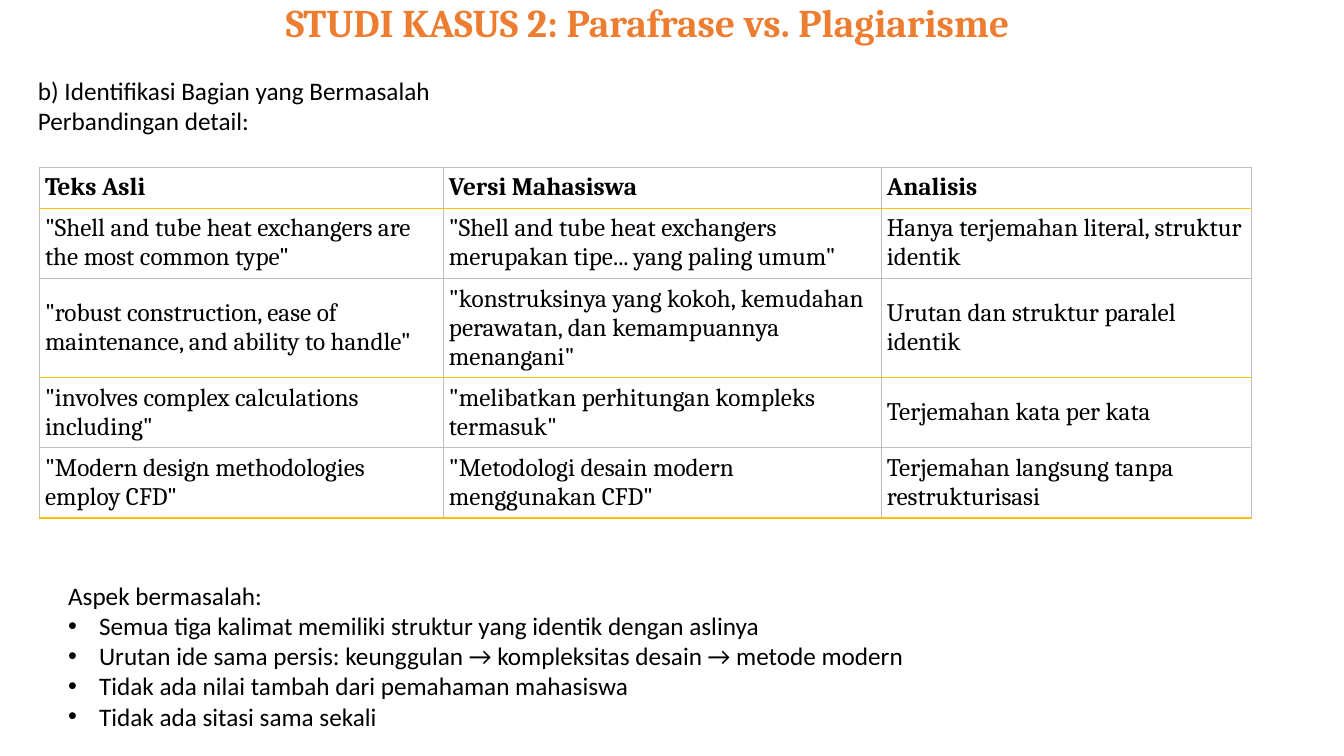
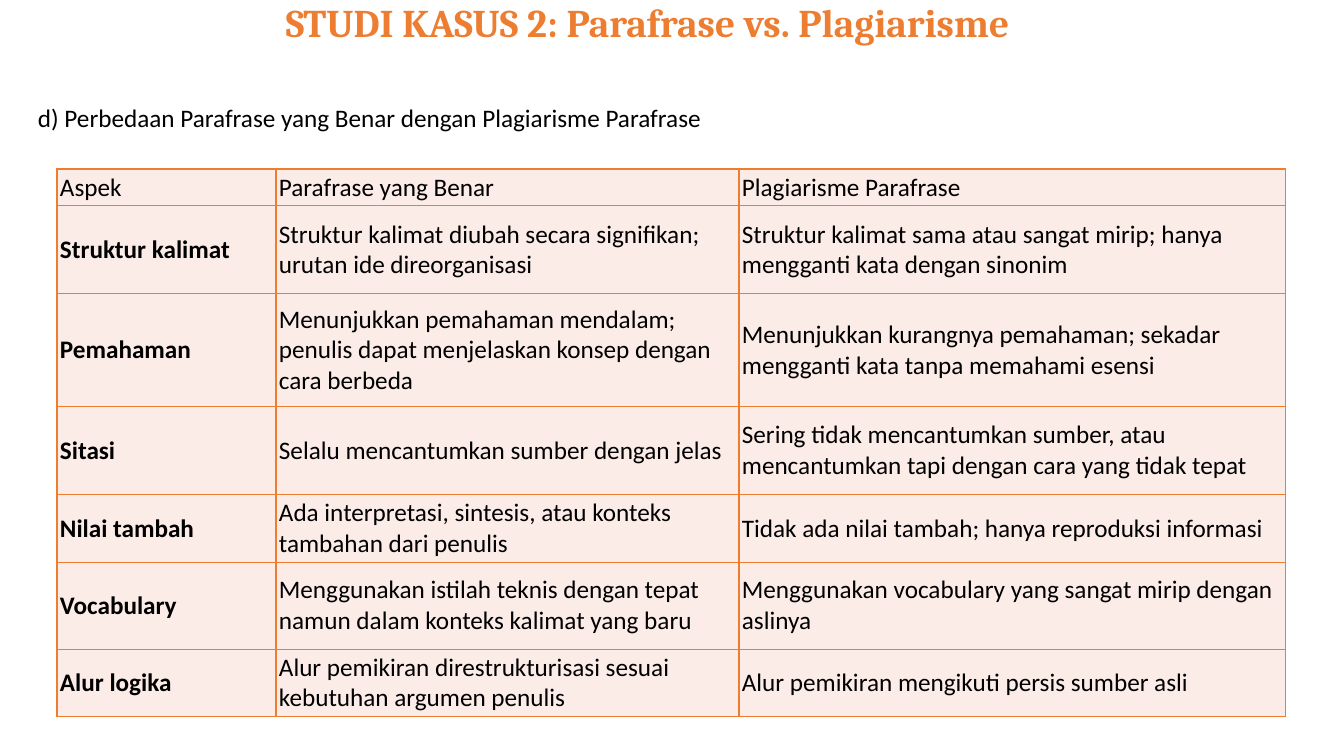
from lxml.etree import SubElement
from pptx import Presentation
from pptx.dml.color import RGBColor
from pptx.enum.text import MSO_ANCHOR, MSO_AUTO_SIZE, PP_ALIGN
from pptx.oxml.ns import qn
from pptx.util import Emu, Pt

EMU_PER_PIXEL = 914400 / 100.8
ORANGE, GOLD, GREY = "ED7D31", "FFC000", "BFBFBF"
BLACK, BLUSH = "000000", "FCECE8"
HEADING_FONT, BODY_FONT = "Cambria", "Calibri"
TITLE_AND_CONTENT, TITLE_ONLY = 1, 5


def px(length):
    return Emu(round(length * EMU_PER_PIXEL))


def color(value):
    return RGBColor.from_string(value)


class Deck:
    """Holds the shared style and the slide being built."""

    def __init__(self):
        self.presentation = Presentation()
        self.presentation.slide_width = px(1344)
        self.presentation.slide_height = px(756)
        self.slide = None

    def add_slide(self, layout, title):
        layouts = self.presentation.slide_layouts
        self.slide = self.presentation.slides.add_slide(layouts[layout])
        shape = self.slide.shapes.title
        self.place(shape, 68, 1, 1159, 48)
        frame = shape.text_frame
        frame.text = title
        frame.auto_size = MSO_AUTO_SIZE.NONE
        frame.vertical_anchor = MSO_ANCHOR.MIDDLE
        paragraph = frame.paragraphs[0]
        paragraph.alignment = PP_ALIGN.CENTER
        paragraph.line_spacing = 0.9
        self.style(paragraph, HEADING_FONT, 28, ORANGE, True)

    def place(self, shape, left, top, width, height):
        shape.left, shape.top = px(left), px(top)
        shape.width, shape.height = px(width), px(height)

    def style(self, paragraph, name=BODY_FONT, size=18, text_color=BLACK, bold=False):
        font = paragraph.font
        font.name, font.size, font.bold = name, Pt(size), bold
        font.color.rgb = color(text_color)

    def text(self, left, top, width, height, lines):
        box = self.slide.shapes.add_textbox(px(left), px(top), px(width), px(height))
        frame = box.text_frame
        frame.word_wrap = True
        frame.text = "\n".join(lines)
        for paragraph in frame.paragraphs:
            self.style(paragraph)

    def bullet_list(self, left, top, width, height, heading, items):
        body = self.slide.placeholders[1]
        self.place(body, left, top, width, height)
        frame = body.text_frame
        frame.auto_size = MSO_AUTO_SIZE.NONE
        frame.text = "\n".join([heading, *items])
        for index, paragraph in enumerate(frame.paragraphs):
            paragraph.space_before = Pt(0)
            indent = px(31) if index else 0
            properties = paragraph._p.get_or_add_pPr()
            properties.set("marL", str(indent))
            properties.set("indent", str(-indent))
            if index:
                SubElement(properties, qn("a:buFont"), typeface="Arial")
                SubElement(properties, qn("a:buChar"), char="•")
            else:
                SubElement(properties, qn("a:buNone"))
            self.style(paragraph)

    def border(self, cell, side, line_color, points):
        line = SubElement(cell._tc.get_or_add_tcPr(), qn(f"a:ln{side}"), w=str(Pt(points)))
        fill = SubElement(line, qn("a:solidFill"))
        SubElement(fill, qn("a:srgbClr"), val=line_color)

    def table(self, left, top, widths, heights, rows, margin, font_name,
              is_bold, rule, side_rule, fill=None):
        """rule(n) gives colour and width of horizontal line n, from the top."""
        frame = self.slide.shapes.add_table(
            len(rows), len(widths), px(left), px(top), px(sum(widths)), px(sum(heights)))
        table = frame.table
        table.first_row = table.horz_banding = False
        for column, width in zip(table.columns, widths):
            column.width = px(width)
        for row, height in zip(table.rows, heights):
            row.height = px(height)
        for row_index, row in enumerate(rows):
            for column_index, value in enumerate(row):
                cell = table.cell(row_index, column_index)
                cell.text = value
                cell.vertical_anchor = MSO_ANCHOR.MIDDLE
                cell.margin_left = cell.margin_right = px(margin)
                cell.margin_top = cell.margin_bottom = px(margin)
                self.style(cell.text_frame.paragraphs[0], font_name,
                           bold=is_bold(row_index, column_index))
                self.border(cell, "L", *side_rule)
                self.border(cell, "R", *side_rule)
                self.border(cell, "T", *rule(row_index))
                self.border(cell, "B", *rule(row_index + 1))
                if fill:
                    cell.fill.solid()
                    cell.fill.fore_color.rgb = color(fill)
                else:
                    cell.fill.background()


TITLE = "STUDI KASUS 2: Parafrase vs. Plagiarisme"

COMPARISON = [
    ("Teks Asli", "Versi Mahasiswa", "Analisis"),
    ('"Shell and tube heat exchangers are the most common type"',
     '"Shell and tube heat exchangers merupakan tipe... yang paling umum"',
     "Hanya terjemahan literal, struktur identik"),
    ('"robust construction, ease of maintenance, and ability to handle"',
     '"konstruksinya yang kokoh, kemudahan perawatan, dan kemampuannya menangani"',
     "Urutan dan struktur paralel identik"),
    ('"involves complex calculations including"',
     '"melibatkan perhitungan kompleks termasuk"',
     "Terjemahan kata per kata"),
    ('"Modern design methodologies employ CFD"',
     '"Metodologi desain modern menggunakan CFD"',
     "Terjemahan langsung tanpa restrukturisasi"),
]

DIFFERENCES = [
    ("Aspek", "Parafrase yang Benar", "Plagiarisme Parafrase"),
    ("Struktur kalimat",
     "Struktur kalimat diubah secara signifikan; urutan ide direorganisasi",
     "Struktur kalimat sama atau sangat mirip; hanya mengganti kata dengan sinonim"),
    ("Pemahaman",
     "Menunjukkan pemahaman mendalam; penulis dapat menjelaskan konsep dengan cara berbeda",
     "Menunjukkan kurangnya pemahaman; sekadar mengganti kata tanpa memahami esensi"),
    ("Sitasi",
     "Selalu mencantumkan sumber dengan jelas",
     "Sering tidak mencantumkan sumber, atau mencantumkan tapi dengan cara yang tidak tepat"),
    ("Nilai tambah",
     "Ada interpretasi, sintesis, atau konteks tambahan dari penulis",
     "Tidak ada nilai tambah; hanya reproduksi informasi"),
    ("Vocabulary",
     "Menggunakan istilah teknis dengan tepat namun dalam konteks kalimat yang baru",
     "Menggunakan vocabulary yang sangat mirip dengan aslinya"),
    ("Alur logika",
     "Alur pemikiran direstrukturisasi sesuai kebutuhan argumen penulis",
     "Alur pemikiran mengikuti persis sumber asli"),
]


def main():
    deck = Deck()

    # Problem passages: every second horizontal line is gold
    deck.add_slide(TITLE_AND_CONTENT, TITLE)
    deck.table(
        39, 167, [404, 438, 370], [41, 69, 99, 69, 69], COMPARISON, 6, HEADING_FONT,
        is_bold=lambda row, column: row == 0,
        rule=lambda line: (GOLD, 1) if line % 2 else (GREY, 0.5),
        side_rule=(GREY, 0.5))
    deck.text(28, 70, 672, 72,
              ["b) Identifikasi Bagian yang Bermasalah", "Perbandingan detail:"])
    deck.bullet_list(58, 575, 1018, 163, "Aspek bermasalah:", [
        "Semua tiga kalimat memiliki struktur yang identik dengan aslinya",
        "Urutan ide sama persis: keunggulan → kompleksitas desain → metode modern",
        "Tidak ada nilai tambah dari pemahaman mahasiswa",
        "Tidak ada sitasi sama sekali",
    ])

    # Proper paraphrase against plagiarism
    deck.add_slide(TITLE_ONLY, TITLE)
    deck.table(
        57, 169, [219, 463, 547], [36, 88, 113, 88, 67, 87, 67], DIFFERENCES, 3, BODY_FONT,
        is_bold=lambda row, column: row > 0 and column == 0,
        rule=lambda line: (ORANGE, 1),
        side_rule=(ORANGE, 1), fill=BLUSH)
    deck.text(28, 97, 827, 40,
              ["d) Perbedaan Parafrase yang Benar dengan Plagiarisme Parafrase"])

    deck.presentation.save("out.pptx")


if __name__ == "__main__":
    main()
